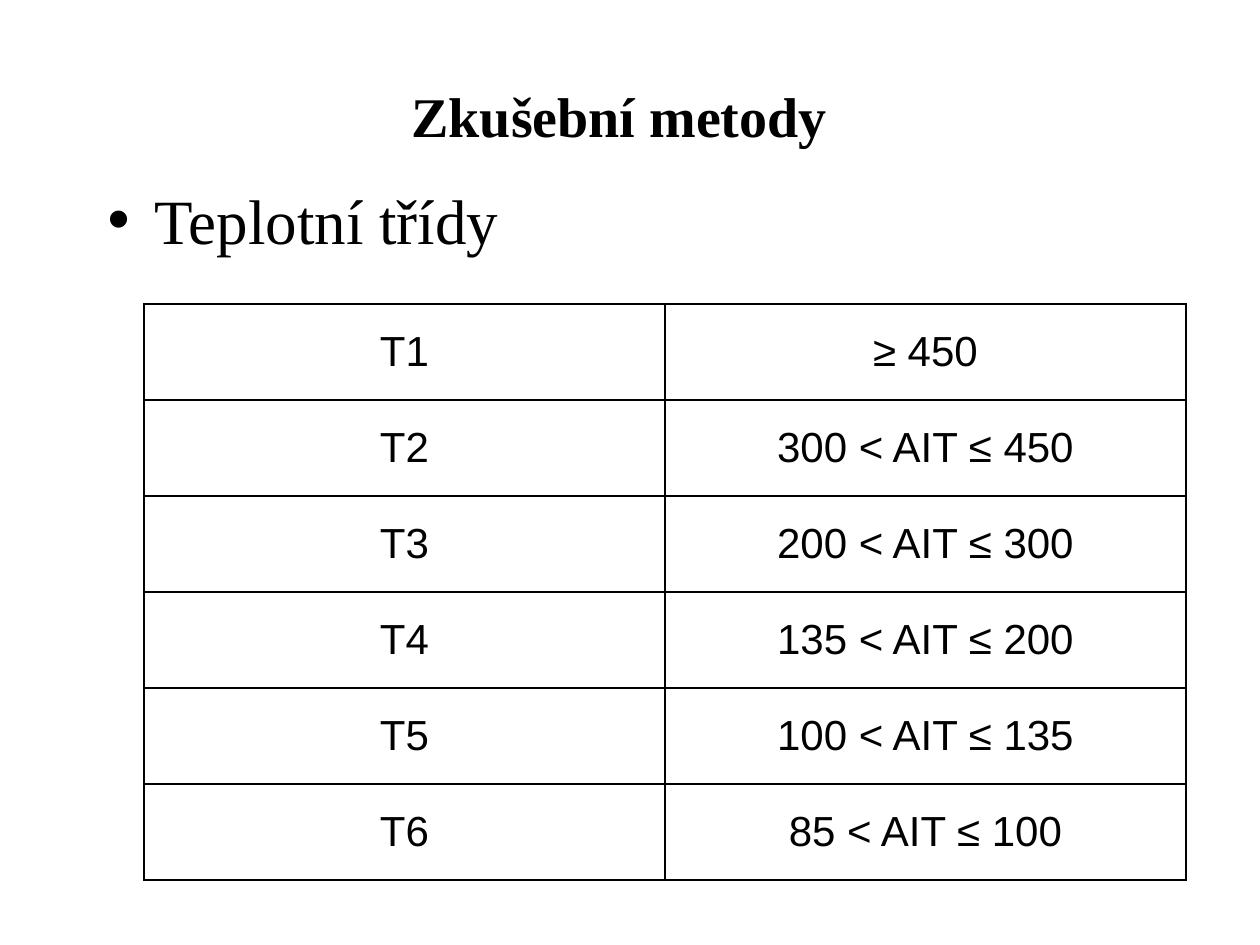
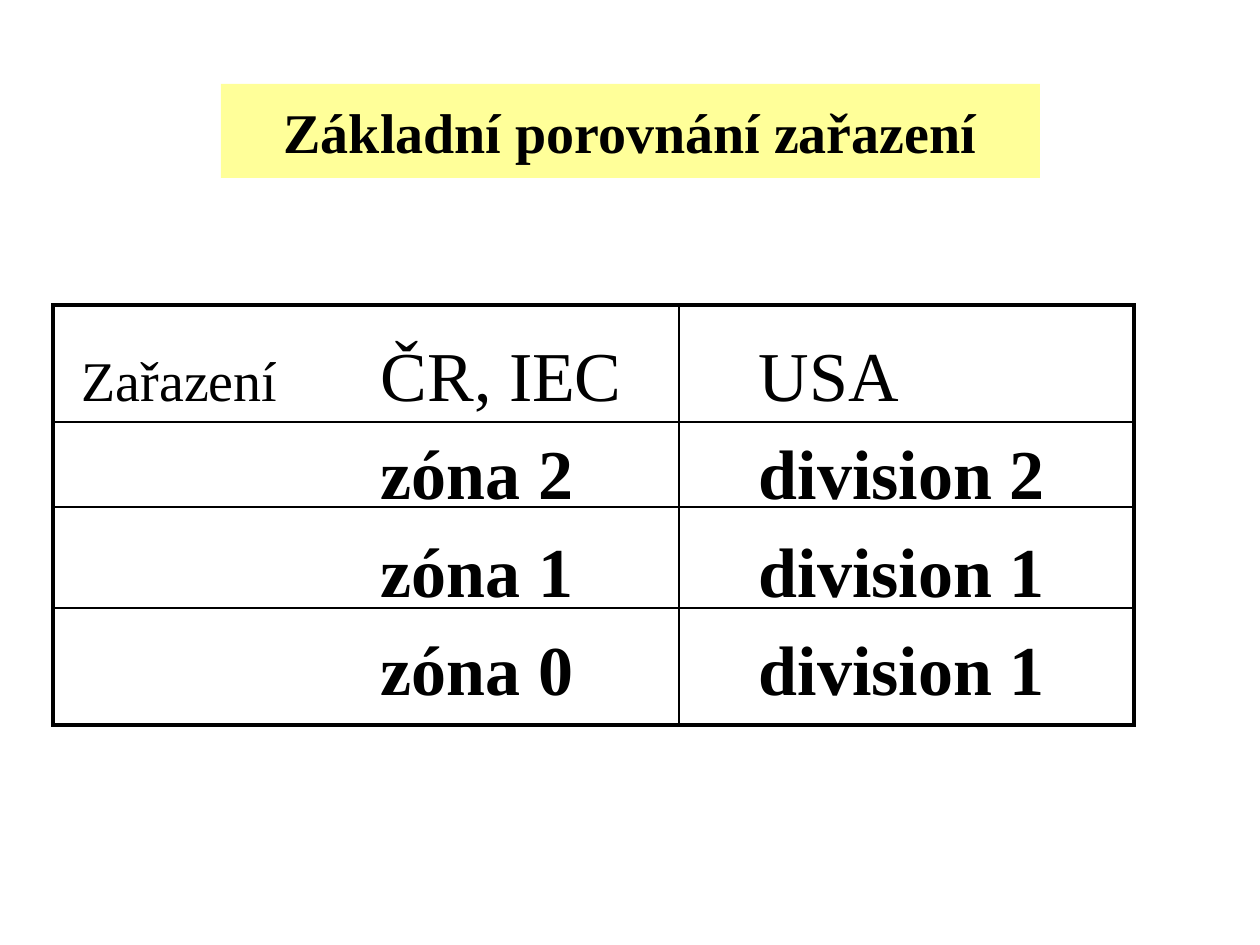
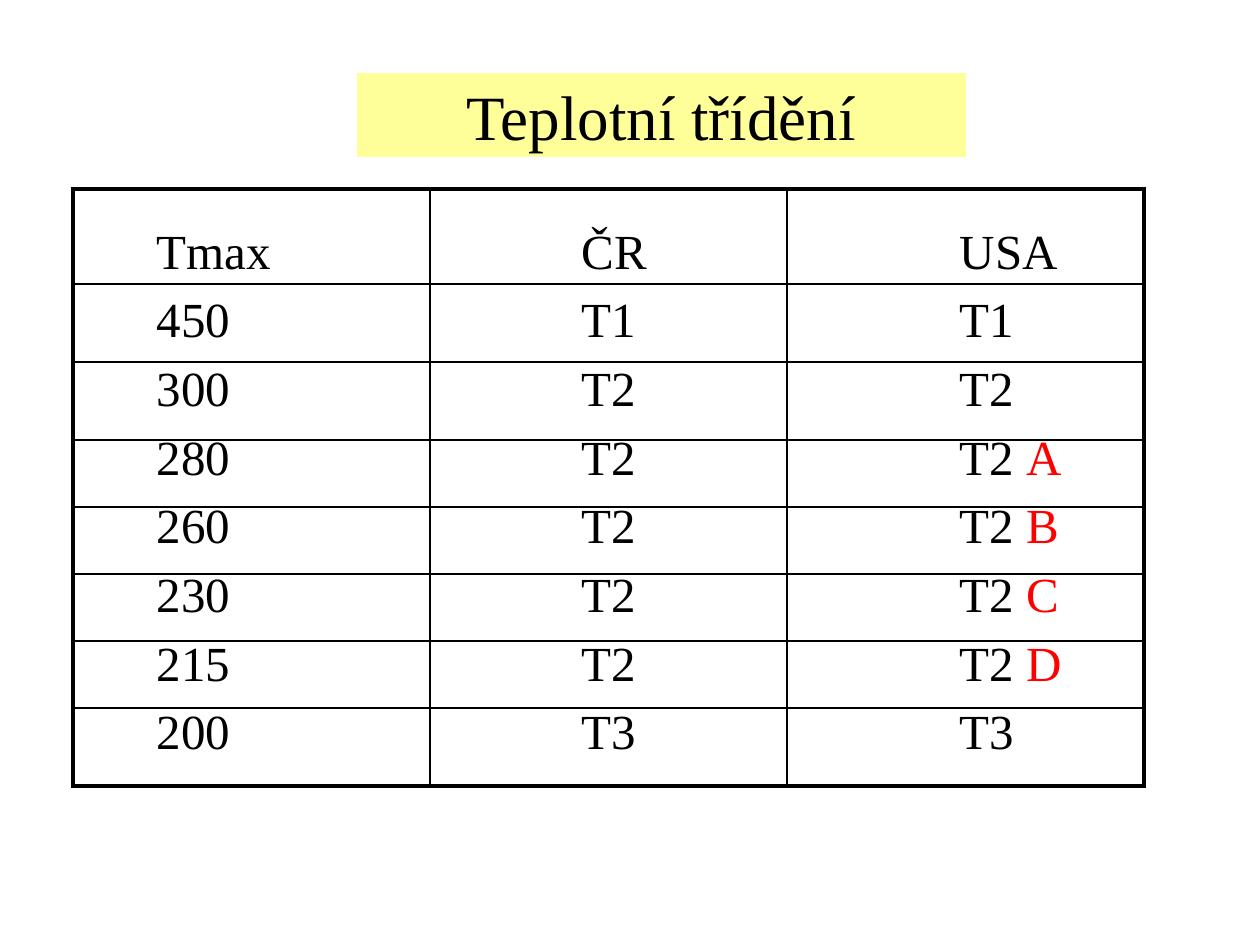
from pptx import Presentation
from pptx.dml.color import RGBColor
from pptx.enum import text
from pptx.oxml.ns import qn
from pptx.util import Emu, Pt
from lxml import etree

SCALE = 914400 / 126  # EMU in one px
COLORS = {"ink": "000000", "band": "FFFF99", "accent": "FF0000"}
SERIF, SANS = "Times New Roman", "Arial"
THIN, THICK = 1, 2.25
TAB = 126


def px(value):
    return Emu(round(value * SCALE))


def rgb(name):
    return RGBColor.from_string(COLORS[name])


class Deck:
    def __init__(self, width, height):
        self.prs = Presentation()
        self.prs.slide_width, self.prs.slide_height = px(width), px(height)
        self.slide = None
        body_style = self.prs.slide_master.element.find(".//" + qn("p:bodyStyle"))
        body_style.find(qn("a:lvl1pPr")).set("defTabSz", str(px(TAB)))

    def new_slide(self):
        self.slide = self.prs.slides.add_slide(self.prs.slide_layouts[1])

    def place(self, sp, box):
        sp.left, sp.top, sp.width, sp.height = map(px, box)
        tf = sp.text_frame
        tf.word_wrap = True
        tf.auto_size = text.MSO_AUTO_SIZE.NONE
        return tf

    def run(self, p, words, size, font=SERIF, bold=False, color="ink"):
        r = p.add_run()
        r.text = words
        r.font.name, r.font.size, r.font.bold = font, Pt(size), bold
        r.font.color.rgb = rgb(color)

    def title(self, words, box, size=32, bold=True, band=True):
        sp = self.slide.shapes.title
        tf = self.place(sp, box)
        tf.vertical_anchor = text.MSO_ANCHOR.MIDDLE
        if band:
            sp.fill.solid()
            sp.fill.fore_color.rgb = rgb("band")
        p = tf.paragraphs[0]
        p.alignment = text.PP_ALIGN.CENTER
        self.run(p, words, size, bold=bold)

    def body(self, lines, box, size, bullets=False):
        """Each line is a list of (words, run options)."""
        tf = self.place(self.slide.placeholders[1], box)
        for i, line in enumerate(lines):
            p = tf.add_paragraph() if i else tf.paragraphs[0]
            if not bullets:
                etree.SubElement(p._p.get_or_add_pPr(), qn("a:buNone"))
            for words, options in line:
                self.run(p, words, **{"size": size, **options})

    def table(self, left, top, widths, heights, frame=THICK):
        """Add an unfilled grid with thin inner lines and the given frame width."""
        n_rows, n_cols = len(heights), len(widths)
        table = self.slide.shapes.add_table(
            n_rows, n_cols, px(left), px(top), px(sum(widths)), px(sum(heights))).table
        table.first_row = table.horz_banding = False
        for column, width in zip(table.columns, widths):
            column.width = px(width)
        for i, (row, height) in enumerate(zip(table.rows, heights)):
            row.height = px(height)
            for j, cell in enumerate(row.cells):
                cell.fill.background()
                on_frame = {"L": j == 0, "R": j == n_cols - 1,
                            "T": i == 0, "B": i == n_rows - 1}
                self.borders(cell, {side: frame if outer else THIN
                                    for side, outer in on_frame.items()})
        return table

    def borders(self, cell, widths):
        tcPr = cell._tc.get_or_add_tcPr()
        for i, (side, width) in enumerate(widths.items()):
            ln = etree.Element(qn("a:ln" + side), w=str(Pt(width)))
            fill = etree.SubElement(ln, qn("a:solidFill"))
            etree.SubElement(fill, qn("a:srgbClr"), val=COLORS["ink"])
            tcPr.insert(i, ln)

    def cell_text(self, cell, words):
        cell.vertical_anchor = text.MSO_ANCHOR.MIDDLE
        cell.margin_left = cell.margin_right = px(9)
        cell.margin_top = cell.margin_bottom = 0
        p = cell.text_frame.paragraphs[0]
        p.alignment = text.PP_ALIGN.CENTER
        p.space_before = p.space_after = Pt(3)
        self.run(p, words, 24, font=SANS)


def temperature_classes(deck):
    deck.new_slide()
    deck.title("Zkušební metody", (84, 36, 1071, 158), band=False)
    deck.body([[("Teplotní třídy", {})]], (95, 175, 1130, 79), 36, bullets=True)
    ranges = ["≥ 450", "300 < AIT ≤ 450", "200 < AIT ≤ 300",
              "135 < AIT ≤ 200", "100 < AIT ≤ 135", "85 < AIT ≤ 100"]
    table = deck.table(144, 304, [521] * 2, [96] * len(ranges), frame=THIN)
    for i, limits in enumerate(ranges):
        deck.cell_text(table.cell(i, 0), f"T{i + 1}")
        deck.cell_text(table.cell(i, 1), limits)


def zone_comparison(deck):
    deck.new_slide()
    deck.title("Základní porovnání zařazení", (221, 84, 819, 94))
    lines = [[("Zařazení", {"size": 32}), ("\tČR, IEC\t\tUSA", {})]]
    for zone, division in [(2, 2), (1, 1), (0, 1)]:
        lines.append([(f"\t\t\tzóna {zone}\t\tdivision {division}", {"bold": True})])
    deck.body(lines, (69, 325, 1121, 410), 40)
    deck.table(53, 305, [626, 455], [117, 85, 101, 117])


def temperature_sorting(deck):
    deck.new_slide()
    deck.title("Teplotní třídění", (357, 73, 609, 84), size=36, bold=False)
    rows = [("Tmax", "ČR", "USA", ""), ("450", "T1", "T1", ""),
            ("300", "T2", "T2", ""), ("280", "T2", "T2 ", "A"),
            ("260", "T2", "T2 ", "B"), ("230", "T2", "T2 ", "C"),
            ("215", "T2", "T2 ", "D"), ("200", "T3", "T3", "")]
    lines = []
    for *columns, suffix in rows:
        line = [("\t\t\t".join(columns), {})]
        if suffix:
            line.append((suffix, {"color": "accent"}))
        lines.append(line)
    deck.body(lines, (144, 214, 1062, 573), 28)
    deck.table(73, 189, [357] * 3, [95, 78, 78] + [67] * 4 + [78])


def main():
    deck = Deck(1260, 945)
    temperature_classes(deck)
    zone_comparison(deck)
    temperature_sorting(deck)
    deck.prs.save("out.pptx")


if __name__ == "__main__":
    main()
